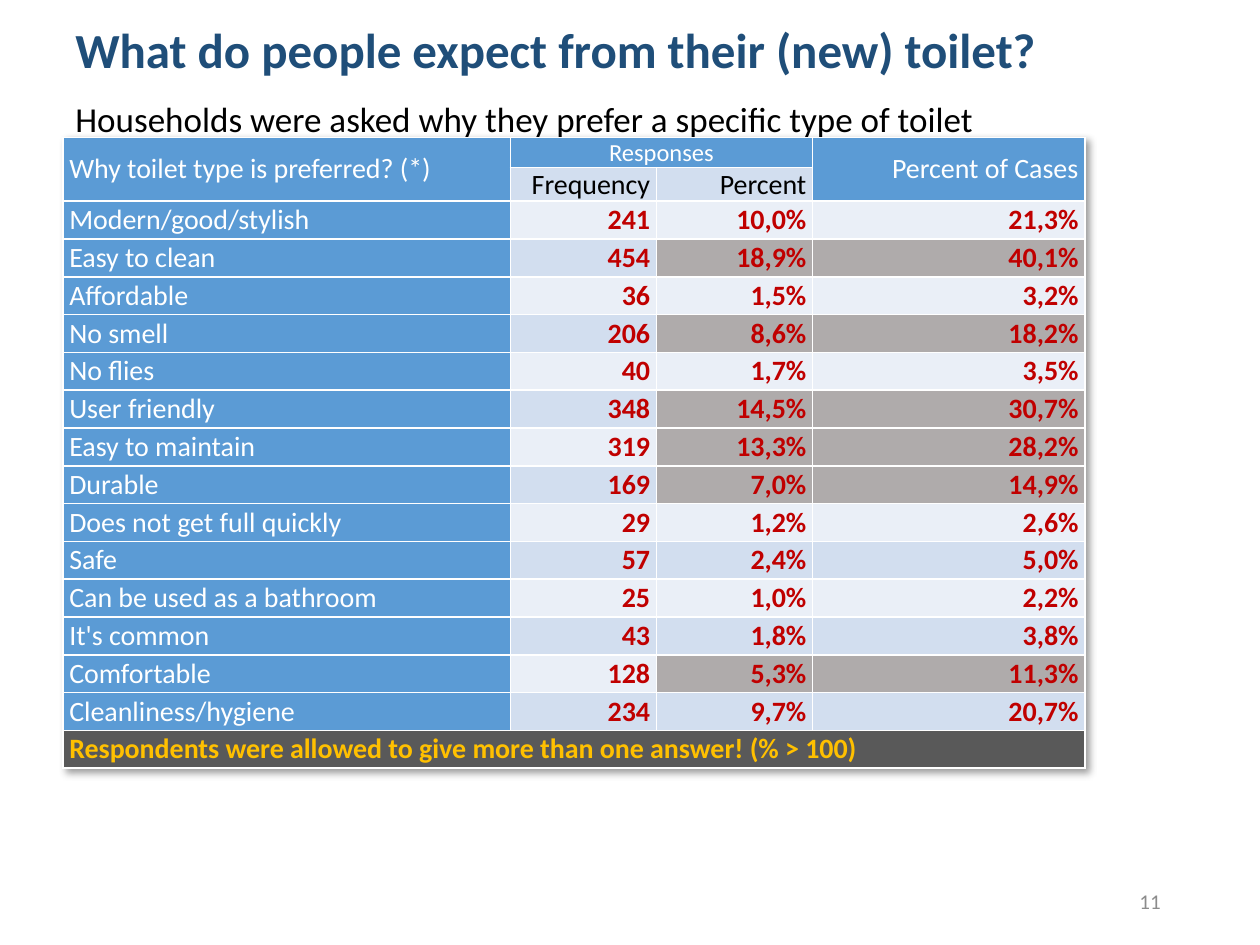
"""Build a slide with a table of the reasons households prefer a toilet type."""
from lxml import etree
from pptx import Presentation
from pptx.dml.color import RGBColor
from pptx.enum.text import MSO_ANCHOR as Anchor, PP_ALIGN as Align
from pptx.oxml import parse_xml
from pptx.oxml.ns import nsdecls, qn
from pptx.util import Inches, Pt

COLORS = {
    "title": "1F4E79", "text": "000000", "number": "8C8C8C", "white": "FFFFFF",
    "header": "5B9BD5", "light": "EAEFF7", "band": "D2DEEF", "highlight": "AFABAB",
    "value": "C00000", "note": "FFC000", "note_fill": "595959",
}


def write(frame, text, size, color, bold=False, align=Align.LEFT, spacing=None):
    frame.word_wrap = True
    paragraph = frame.paragraphs[0]
    paragraph.text = text
    paragraph.alignment = align
    paragraph.line_spacing = spacing
    paragraph.font.name = "Calibri"
    paragraph.font.size = Pt(size)
    paragraph.font.bold = bold
    paragraph.font.color.rgb = RGBColor.from_string(COLORS[color])


def fill_cell(row, column, text, fill, color="white", bold=False, align=Align.LEFT, size=16):
    cell = table.cell(row, column)
    cell.margin_left = cell.margin_right = Inches(0.05)
    cell.margin_top = cell.margin_bottom = 0
    cell.vertical_anchor = Anchor.MIDDLE
    write(cell.text_frame, text, size, color, bold, align)
    cell.fill.solid()
    cell.fill.fore_color.rgb = RGBColor.from_string(COLORS[fill])


prs = Presentation()
prs.slide_width, prs.slide_height = Inches(10), Inches(7.5)
slide = prs.slides.add_slide(prs.slide_layouts[6])

title = slide.shapes.add_textbox(Inches(0.5), 0, Inches(9), Inches(0.84)).text_frame
title.vertical_anchor = Anchor.MIDDLE
write(title, "What do people expect from their (new) toilet?", 28, "title", True, spacing=0.9)

question = slide.shapes.add_textbox(Inches(0.5), Inches(0.76), Inches(8.75), Inches(5.94)).text_frame
write(question, "Households were asked why they prefer a specific type of toilet", 20, "text", spacing=0.9)

page_number = slide.shapes.add_textbox(Inches(7.06), Inches(6.95), Inches(2.25), Inches(0.4)).text_frame
page_number.vertical_anchor = Anchor.MIDDLE
write(page_number, "11", 12, "number", align=Align.RIGHT)

reasons = [
    ("Modern/good/stylish", "241", "10,0%", "21,3%"),
    ("Easy to clean", "454", "18,9%", "40,1%"),
    ("Affordable", "36", "1,5%", "3,2%"),
    ("No smell", "206", "8,6%", "18,2%"),
    ("No flies", "40", "1,7%", "3,5%"),
    ("User friendly", "348", "14,5%", "30,7%"),
    ("Easy to maintain", "319", "13,3%", "28,2%"),
    ("Durable", "169", "7,0%", "14,9%"),
    ("Does not get full quickly", "29", "1,2%", "2,6%"),
    ("Safe", "57", "2,4%", "5,0%"),
    ("Can be used as a bathroom", "25", "1,0%", "2,2%"),
    ("It's common", "43", "1,8%", "3,8%"),
    ("Comfortable", "128", "5,3%", "11,3%"),
    ("Cleanliness/hygiene", "234", "9,7%", "20,7%"),
]
highlighted = {"Easy to clean", "No smell", "User friendly", "Easy to maintain", "Durable", "Comfortable"}
widths = [3.55, 1.16, 1.24, 2.16]
heights = [0.24, 0.25] + [0.3] * (len(reasons) + 1)
note_row = len(heights) - 1

table = slide.shapes.add_table(
    len(heights), len(widths), Inches(0.5), Inches(1.09), Inches(sum(widths)), Inches(sum(heights))
).table
for column, width in zip(table.columns, widths):
    column.width = Inches(width)
for row, height in zip(table.rows, heights):
    row.height = Inches(height)

for first, last in [((0, 0), (1, 0)), ((0, 1), (0, 2)), ((0, 3), (1, 3)), ((note_row, 0), (note_row, 3))]:
    table.cell(*first).merge(table.cell(*last))

fill_cell(0, 0, "Why toilet type is preferred? (*)", "header")
fill_cell(0, 1, "Responses", "header", align=Align.CENTER, size=14)
table.cell(0, 1).vertical_anchor = Anchor.BOTTOM
fill_cell(0, 3, "Percent of Cases", "header", align=Align.RIGHT)
fill_cell(1, 1, "Frequency", "band", "text", align=Align.RIGHT)
fill_cell(1, 2, "Percent", "band", "text", align=Align.RIGHT)

for index, (reason, *values) in enumerate(reasons):
    band = "band" if index % 2 else "light"
    share_fill = "highlight" if reason in highlighted else band
    fill_cell(index + 2, 0, reason, "header")
    for column, (value, fill) in enumerate(zip(values, [band, share_fill, share_fill]), 1):
        fill_cell(index + 2, column, value, fill, "value", True, Align.RIGHT)

fill_cell(note_row, 0, "Respondents were allowed to give more than one answer! (% > 100)", "note_fill", "note", True)

for cell in table.iter_cells():
    properties = cell._tc.get_or_add_tcPr()
    for position, side in enumerate(["lnL", "lnR", "lnT", "lnB"]):
        border = etree.Element(qn(f"a:{side}"), w=str(Pt(1)))
        paint = etree.SubElement(border, qn("a:solidFill"))
        etree.SubElement(paint, qn("a:srgbClr"), val=COLORS["white"])
        properties.insert(position, border)

table._tbl.tblPr.insert(0, parse_xml(
    f'<a:effectLst {nsdecls("a")}><a:outerShdw blurRad="50800" dist="38100" dir="2700000" algn="tl">'
    f'<a:srgbClr val="{COLORS["text"]}"><a:alpha val="40000"/></a:srgbClr></a:outerShdw></a:effectLst>'
))

prs.save("out.pptx")
